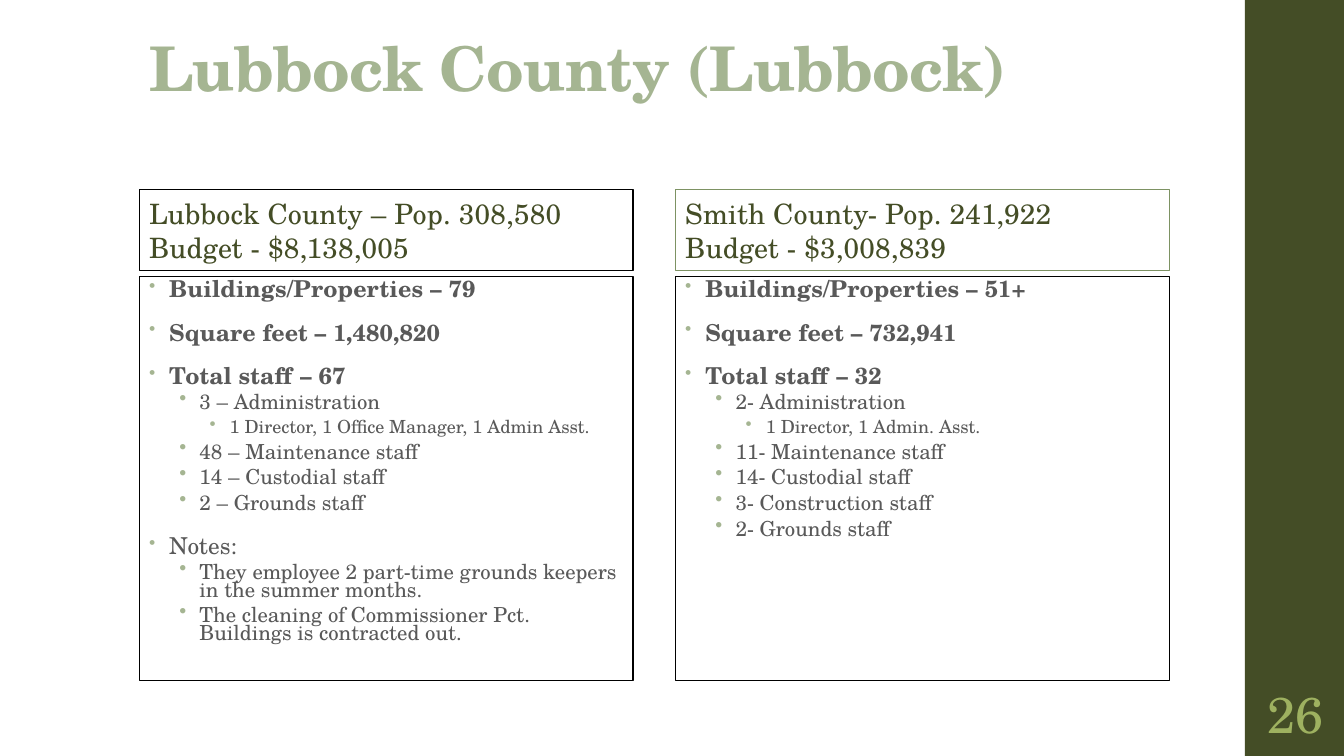
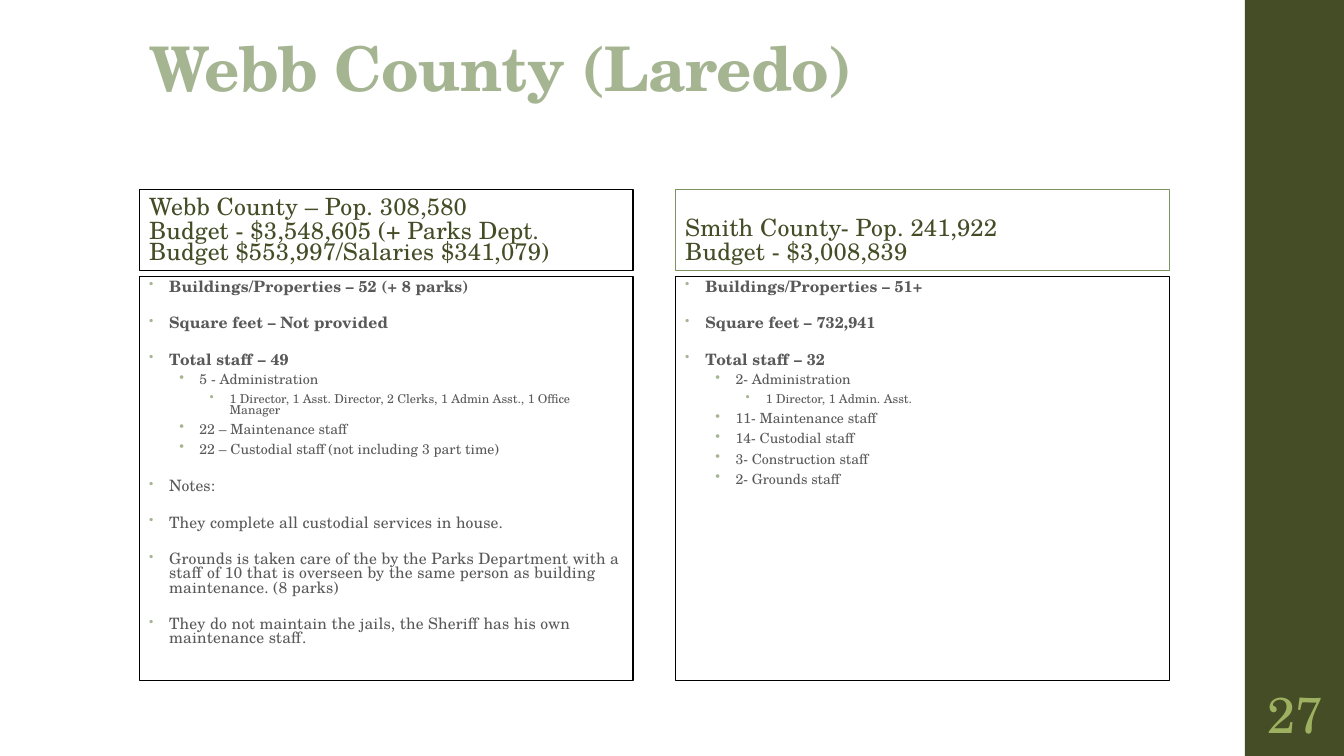
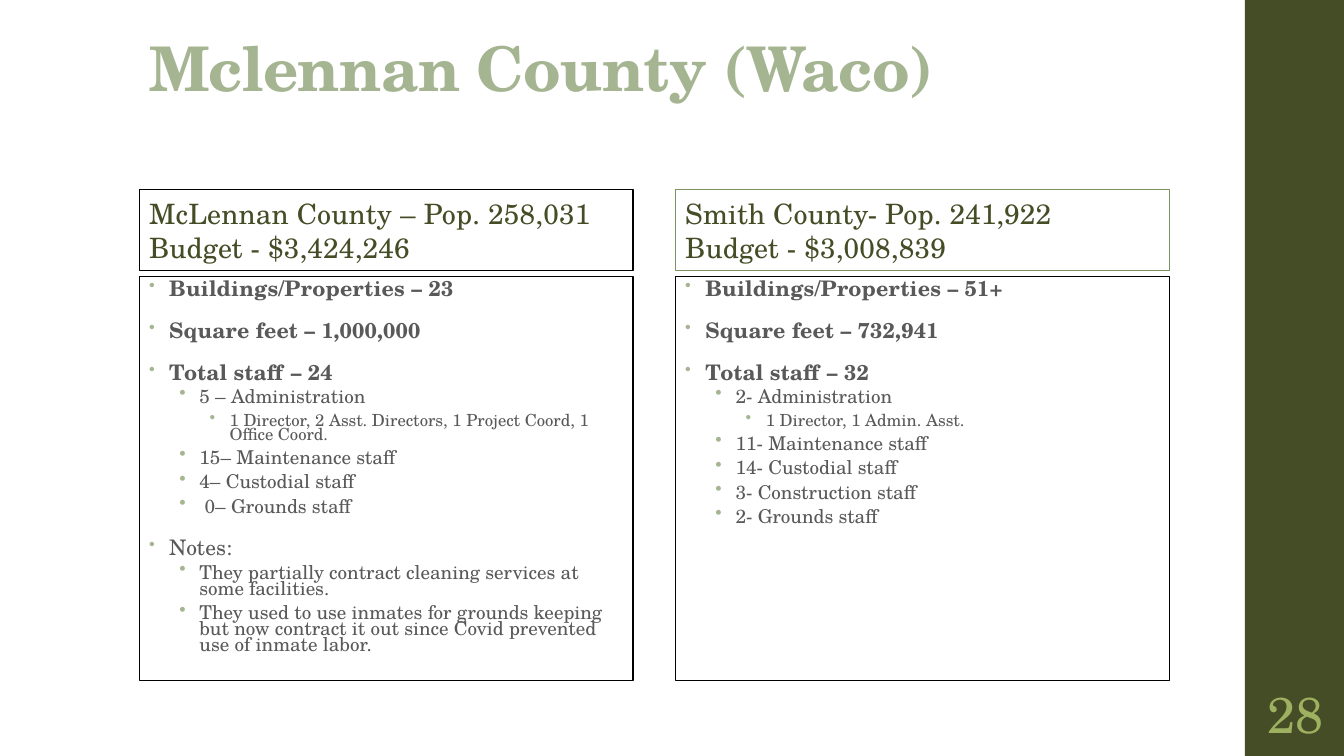
from dataclasses import dataclass

from lxml.etree import SubElement
from pptx import Presentation
from pptx.dml.color import RGBColor
from pptx.enum.shapes import MSO_SHAPE as Preset
from pptx.enum.text import MSO_ANCHOR as Anchor, PP_ALIGN as Align
from pptx.oxml.ns import qn
from pptx.util import Pt

FONT = "TeX Gyre Schola"
DARK_OLIVE, SAGE, LIME = "444D26", "A5B592", "9EB160"
MOSS, GREY, BLACK = "7D9263", "595959", "000000"
WIDTH, HEIGHT = 960, 540
BAND_LEFT, BAND_WIDTH = 889.2, 72
COLUMN_LEFTS = (99.4, 482.4)
COLUMN_WIDTH = 352.8
HEADER_TOP, HEADER_HEIGHT = 135.4, 57.6
BODY_TOP, BODY_HEIGHT = 197.3, 288.7
FACT_LABELS = ("Buildings/Properties", "Square feet", "Total staff")


@dataclass
class County:
    """Header lines, key facts, staff and notes of one column; staff and notes pair a level with a text."""
    header: tuple
    facts: tuple
    staff: tuple
    notes: tuple = ()


@dataclass
class Comparison:
    """One slide: a county set beside Smith County, with its type sizes."""
    number: int
    title: str
    county: County
    body_sizes: tuple
    header_size: float = 20
    header_spacing: float = 0.95


SMITH = County(
    ("Smith County- Pop. 241,922", "Budget - $3,008,839"),
    ("51+", "732,941", "32"),
    ((1, "2- Administration"),
     (2, "1 Director, 1 Admin. Asst."),
     (1, "11- Maintenance staff"),
     (1, "14- Custodial staff"),
     (1, "3- Construction staff"),
     (1, "2- Grounds staff")))

LUBBOCK = County(
    ("Lubbock County – Pop. 308,580", "Budget - $8,138,005"),
    ("79", "1,480,820", "67"),
    ((1, "3 – Administration"),
     (2, "1 Director, 1 Office Manager, 1 Admin Asst."),
     (1, "48 – Maintenance staff"),
     (1, "14 – Custodial staff"),
     (1, "2 – Grounds staff")),
    ((1, "They employee 2 part-time grounds keepers in the summer months."),
     (1, "The cleaning of Commissioner Pct. Buildings is contracted out.")))

WEBB = County(
    ("Webb County – Pop. 308,580",
     "Budget - $3,548,605 (+ Parks Dept. Budget $553,997/Salaries $341,079)"),
    ("52 (+ 8 parks)", "Not provided", "49"),
    ((1, "5 - Administration"),
     (2, "1 Director, 1 Asst. Director, 2 Clerks, 1 Admin Asst., 1 Office Manager"),
     (1, "22 – Maintenance staff"),
     (1, "22 – Custodial staff (not including 3 part time)")),
    ((0, "They complete all custodial services in house."),
     (0, "Grounds is taken care of the by the Parks Department with a staff of 10 "
         "that is overseen by the same person as building maintenance. (8 parks)"),
     (0, "They do not maintain the jails, the Sheriff has his own maintenance staff.")))

MCLENNAN = County(
    ("McLennan County – Pop. 258,031", "Budget - $3,424,246"),
    ("23", "1,000,000", "24"),
    ((1, "5 – Administration"),
     (2, "1 Director, 2 Asst. Directors, 1 Project Coord, 1 Office Coord."),
     (1, "15– Maintenance staff"),
     (1, "4– Custodial staff"),
     (1, " 0– Grounds staff")),
    ((1, "They partially contract cleaning services at some facilities."),
     (1, "They used to use inmates for grounds keeping but now contract it out "
         "since Covid prevented use of inmate labor.")))

COMPARISONS = (
    Comparison(26, "Lubbock County (Lubbock)", LUBBOCK, (16.6, 14.8, 12.9)),
    Comparison(27, "Webb County (Laredo)", WEBB, (11.2, 10, 8.8), 17, 0.75),
    Comparison(28, "Mclennan County (Waco)", MCLENNAN, (15.3, 13.6, 11.9)),
)


def color(value):
    """Turn a hex string into a colour."""
    return RGBColor.from_string(value)


def add_run(paragraph, text, size, ink, bold=False, tracking=0):
    """Add one styled run; tracking is in points."""
    run = paragraph.add_run()
    run.text = text
    font = run.font
    font.name, font.size, font.bold = FONT, Pt(size), bold
    font.color.rgb = color(ink)
    if tracking:
        run._r.get_or_add_rPr().set("spc", str(round(tracking * 100)))


def set_spacing(paragraph, line, before, after):
    """Set the line spacing and the space around a paragraph."""
    paragraph.line_spacing = line
    paragraph.space_before, paragraph.space_after = Pt(before), Pt(after)


def set_bullet(paragraph, level):
    """Give a paragraph the indent and sage bullet of its level."""
    paragraph.level = level
    properties = paragraph._p.get_or_add_pPr()
    properties.set("marL", str(Pt(14.4 + 21.6 * level)))
    properties.set("indent", str(Pt(-14.4)))
    bullet_color = SubElement(properties, qn("a:buClr"))
    SubElement(bullet_color, qn("a:srgbClr"), val=SAGE)
    if level == 0:
        SubElement(properties, qn("a:buSzPct"), val="80000")
    SubElement(properties, qn("a:buChar"), char="•")


def set_frame(shape, anchor, insets=(7.2, 3.6, 7.2, 3.6)):
    """Prepare a wrapping text frame and return it."""
    frame = shape.text_frame
    frame.word_wrap = True
    frame.vertical_anchor = anchor
    (frame.margin_left, frame.margin_top,
     frame.margin_right, frame.margin_bottom) = map(Pt, insets)
    return frame


def add_paragraphs(frame, count):
    """Return the given number of paragraphs, starting with the first one."""
    return [frame.paragraphs[0]] + [frame.add_paragraph() for _ in range(count - 1)]


def add_rectangle(slide, left, top, width, height, fill=None, line=None):
    """Add a plain rectangle with an optional fill and outline."""
    shape = slide.shapes.add_shape(Preset.RECTANGLE, Pt(left), Pt(top), Pt(width), Pt(height))
    shape.shadow.inherit = False
    if fill:
        shape.fill.solid()
        shape.fill.fore_color.rgb = color(fill)
    else:
        shape.fill.background()
    if line:
        shape.line.color.rgb = color(line)
        shape.line.width = Pt(0.75)
    else:
        shape.line.fill.background()
    return shape


def add_band(slide, number):
    """Add the side band and the slide number on it."""
    add_rectangle(slide, BAND_LEFT, 0, BAND_WIDTH, HEIGHT, fill=DARK_OLIVE)
    box = slide.shapes.add_textbox(Pt(BAND_LEFT), Pt(486), Pt(BAND_WIDTH), Pt(46.8))
    paragraph = set_frame(box, Anchor.MIDDLE, (3.6,) * 4).paragraphs[0]
    paragraph.alignment = Align.CENTER
    add_run(paragraph, str(number), 36, LIME)


def add_title(slide, text):
    """Add the slide title."""
    box = slide.shapes.add_textbox(Pt(COLUMN_LEFTS[0]), Pt(20.9), Pt(763.2), Pt(57.6))
    paragraph = set_frame(box, Anchor.BOTTOM, (7.2, 2.2, 7.2, 3.6)).paragraphs[0]
    paragraph.line_spacing = 0.9
    add_run(paragraph, text, 44, SAGE, bold=True, tracking=-0.5)


def add_header(slide, left, lines, outline, size, spacing):
    """Add the outlined box with population and budget."""
    box = add_rectangle(slide, left, HEADER_TOP, COLUMN_WIDTH, HEADER_HEIGHT, line=outline)
    frame = set_frame(box, Anchor.BOTTOM)
    for paragraph, text in zip(add_paragraphs(frame, len(lines)), lines):
        paragraph.alignment = Align.LEFT
        set_spacing(paragraph, spacing, 0, 2)
        add_run(paragraph, text, size, DARK_OLIVE, tracking=0.1)


def list_items(county):
    """List the level, text and weight of every bullet of a county."""
    items = [(0, f"{label} – {fact}", True) for label, fact in zip(FACT_LABELS, county.facts)]
    items += [(level, text, False) for level, text in county.staff]
    if county.notes:
        items.append((0, "Notes:", False))
        items += [(level, text, False) for level, text in county.notes]
    return items


def add_body(slide, left, county, sizes):
    """Add the outlined box with the bullets of a county."""
    box = add_rectangle(slide, left, BODY_TOP, COLUMN_WIDTH, BODY_HEIGHT, line=BLACK)
    frame = set_frame(box, Anchor.TOP)
    items = list_items(county)
    for paragraph, (level, text, bold) in zip(add_paragraphs(frame, len(items)), items):
        paragraph.alignment = Align.LEFT
        set_spacing(paragraph, *((0.7, 3, 3) if level else (0.75, 14, 2)))
        set_bullet(paragraph, level)
        add_run(paragraph, text, sizes[level], GREY, bold, 0 if level else 0.1)


def add_comparison(presentation, comparison):
    """Add one slide that compares a county with Smith County."""
    slide = presentation.slides.add_slide(presentation.slide_layouts[6])
    add_band(slide, comparison.number)
    add_title(slide, comparison.title)
    columns = zip(COLUMN_LEFTS, (comparison.county, SMITH), (BLACK, MOSS))
    for left, county, outline in columns:
        add_header(slide, left, county.header, outline,
                   comparison.header_size, comparison.header_spacing)
        add_body(slide, left, county, comparison.body_sizes)


def main():
    """Build and save the presentation."""
    presentation = Presentation()
    presentation.slide_width, presentation.slide_height = Pt(WIDTH), Pt(HEIGHT)
    for comparison in COMPARISONS:
        add_comparison(presentation, comparison)
    presentation.save("out.pptx")


if __name__ == "__main__":
    main()
